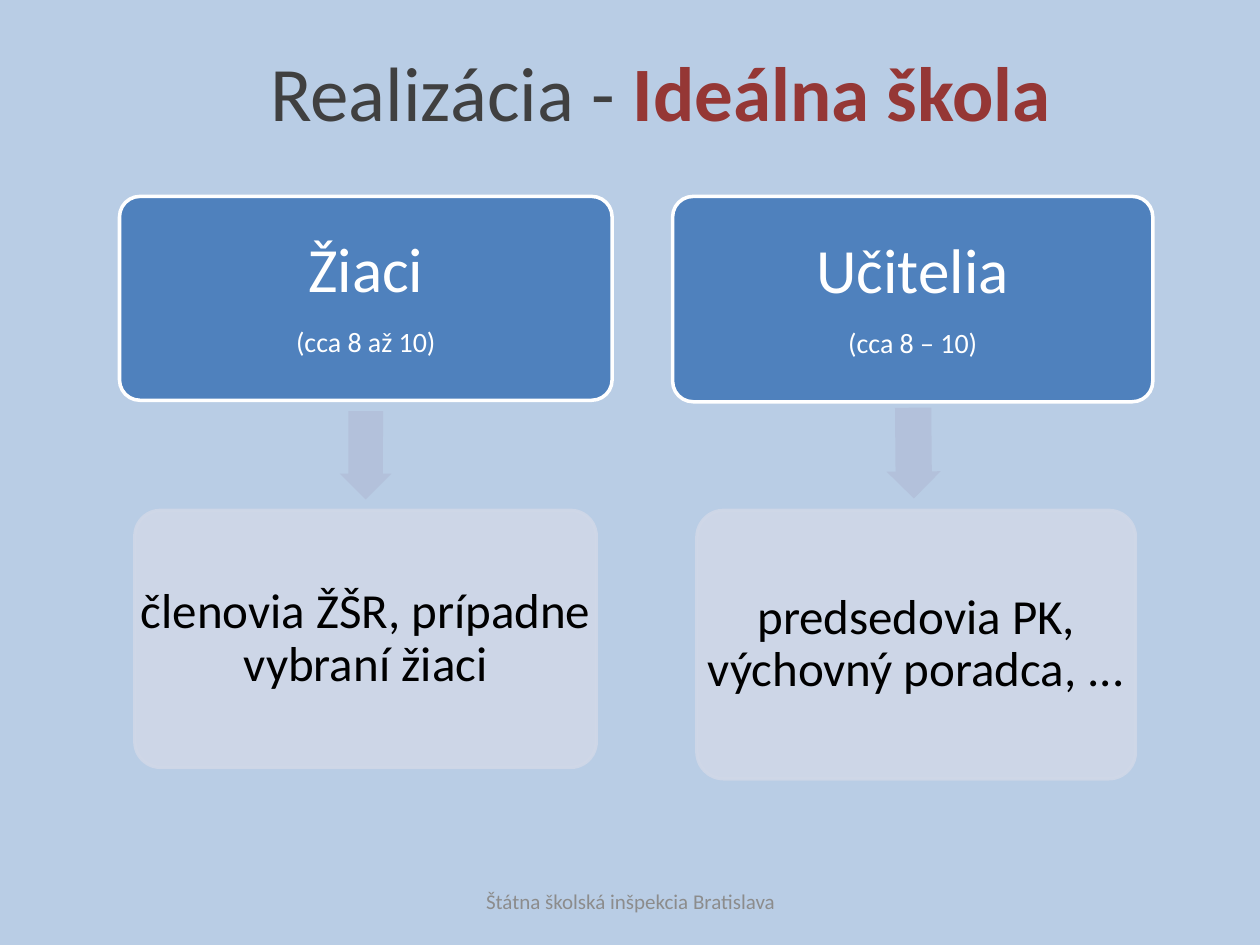
from lxml import etree
from pptx import Presentation
from pptx import util as u
from pptx.dml.color import RGBColor
from pptx.enum import shapes, text
from pptx.oxml import ns

BACKGROUND = RGBColor(0xB9, 0xCD, 0xE5)
BLUE = RGBColor(0x4F, 0x81, 0xBD)
PALE = RGBColor(0xD0, 0xD8, 0xE8)
ARROW = RGBColor(0xB3, 0xC1, 0xDB)
WHITE = RGBColor(0xFF, 0xFF, 0xFF)
BLACK = RGBColor(0, 0, 0)
DARK = RGBColor(0x40, 0x40, 0x40)
RED = RGBColor(0x95, 0x37, 0x35)
GREY = RGBColor(0x8C, 0x8C, 0x8C)

BOX_TOP, DETAIL_TOP = 3.96, 10.29
COLUMNS = [
    {"head": [("Žiaci", 36), ("(cca 8 až 10)", 16)],
     "head_box": (2.41, BOX_TOP, 9.93, 4.11),
     "arrow": (6.48, 8.66, 1.78, 1.04), "angle": 90.1,
     "detail": [("členovia ŽŠR, prípadne vybraní žiaci", 28)],
     "detail_box": (2.72, DETAIL_TOP, 9.3, 5.18)},
    {"head": [("Učitelia", 36), ("(cca 8 – 10)", 16)],
     "head_box": (13.56, BOX_TOP, 9.68, 4.14),
     "arrow": (17.5, 8.59, 1.83, 1.09), "angle": 89.5,
     "detail": [("predsedovia PK, výchovný poradca, ...", 28)],
     "detail_box": (14.05, DETAIL_TOP, 8.84, 5.41)},
]


def lengths(box):
    """Return the box in centimetre lengths."""
    return [u.Cm(value) for value in box]


def set_alpha(fill, percent):
    """Make a solid fill partly transparent."""
    color = fill._xPr.find(ns.qn("a:solidFill"))[0]
    etree.SubElement(color, ns.qn("a:alpha")).set("val", str(percent * 1000))


def add_text(slide, box, lines, color, inset=0.0, compact=True):
    """Add centred lines of (text, size) and return the text frame."""
    frame = slide.shapes.add_textbox(*lengths(box)).text_frame
    frame.word_wrap = True
    frame.vertical_anchor = text.MSO_ANCHOR.MIDDLE
    frame.margin_left = frame.margin_right = u.Cm(inset)
    frame.margin_top = frame.margin_bottom = u.Cm(inset)
    for index, (words, size) in enumerate(lines):
        paragraph = frame.add_paragraph() if index else frame.paragraphs[0]
        paragraph.text = words
        paragraph.alignment = text.PP_ALIGN.CENTER
        paragraph.font.name = "Calibri"
        paragraph.font.size = u.Pt(size)
        paragraph.font.color.rgb = color
        if compact:
            paragraph.line_spacing = 0.9
            paragraph.space_after = u.Pt(size * 0.35)
    return frame


def add_card(slide, box, lines, fill, line, color, inset, alpha=None):
    """Add a rounded card with its text on top."""
    card = slide.shapes.add_shape(
        shapes.MSO_SHAPE.ROUNDED_RECTANGLE, *lengths(box))
    card.adjustments[0] = 0.1
    card.shadow.inherit = False
    card.fill.solid()
    card.fill.fore_color.rgb = fill
    card.line.color.rgb = line
    card.line.width = u.Pt(2)
    if alpha:
        set_alpha(card.fill, alpha)
        set_alpha(card.line.fill, alpha)
    add_text(slide, box, lines, color, inset)


def add_arrow(slide, box, angle):
    """Add a block arrow turned to point down."""
    arrow = slide.shapes.add_shape(
        shapes.MSO_SHAPE.RIGHT_ARROW, *lengths(box))
    arrow.adjustments[0] = 0.67
    arrow.adjustments[1] = 0.5
    arrow.rotation = angle
    arrow.shadow.inherit = False
    arrow.fill.solid()
    arrow.fill.fore_color.rgb = ARROW
    arrow.line.fill.background()


def add_title(slide):
    """Add the title with its emphasised second part."""
    frame = add_text(slide, (3.35, 1.02, 19.94, 1.63),
                     [("Realizácia - ", 44)], DARK, compact=False)
    emphasis = frame.paragraphs[0].add_run()
    emphasis.text = "Ideálna škola"
    emphasis.font.bold = True
    emphasis.font.color.rgb = RED


def main():
    """Build and save the slide."""
    presentation = Presentation()
    presentation.slide_width, presentation.slide_height = lengths((25.4, 19.05))
    slide = presentation.slides.add_slide(presentation.slide_layouts[6])
    slide.background.fill.solid()
    slide.background.fill.fore_color.rgb = BACKGROUND
    add_title(slide)
    add_text(slide, (8.69, 17.65, 8.05, 1.02),
             [("Štátna školská inšpekcia Bratislava", 12)], GREY, compact=False)
    for column in COLUMNS:
        add_card(slide, column["head_box"], column["head"],
                 BLUE, WHITE, WHITE, 0.13)
        add_arrow(slide, column["arrow"], column["angle"])
        add_card(slide, column["detail_box"], column["detail"],
                 PALE, PALE, BLACK, 0.1, alpha=90)
    presentation.save("out.pptx")


if __name__ == "__main__":
    main()
